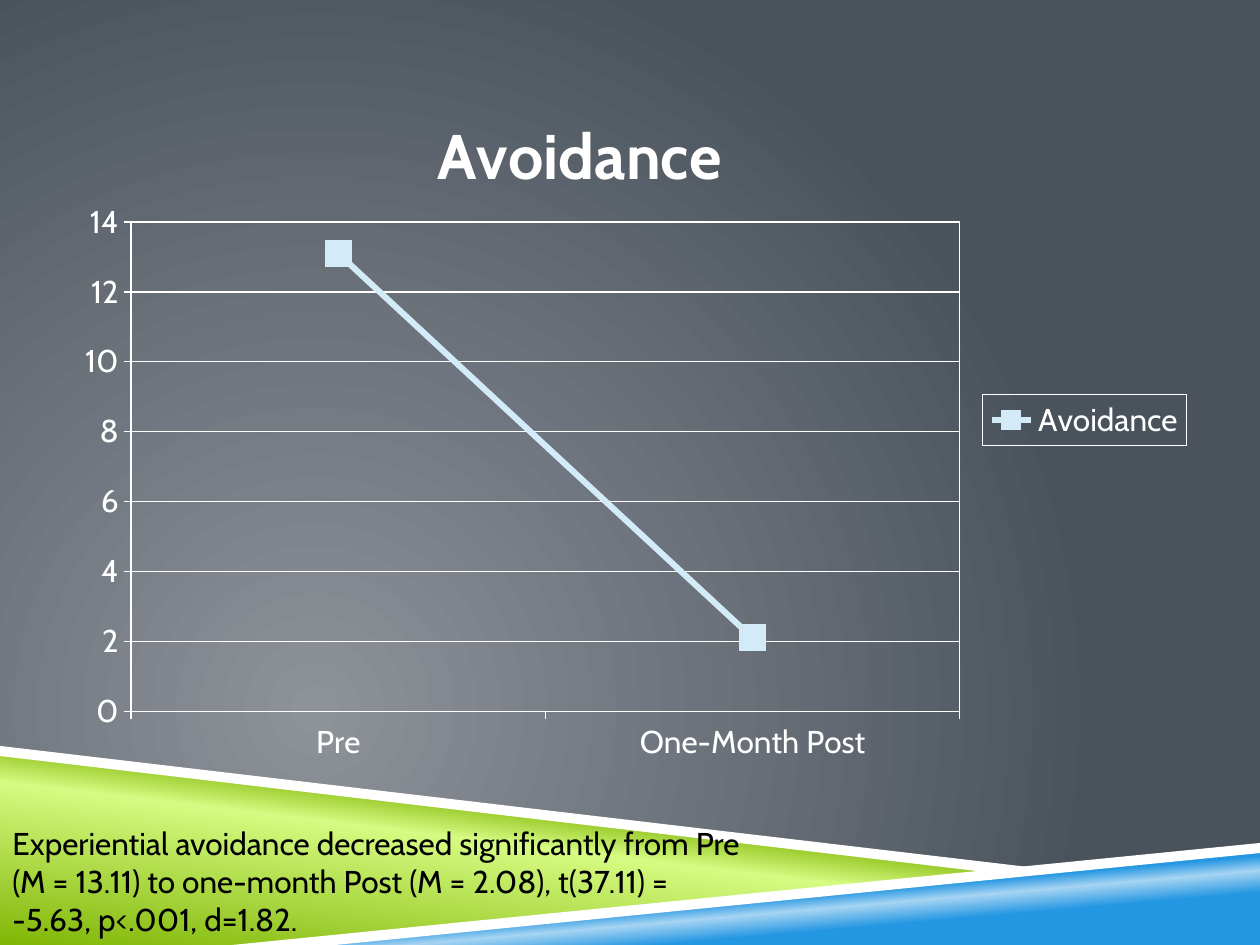
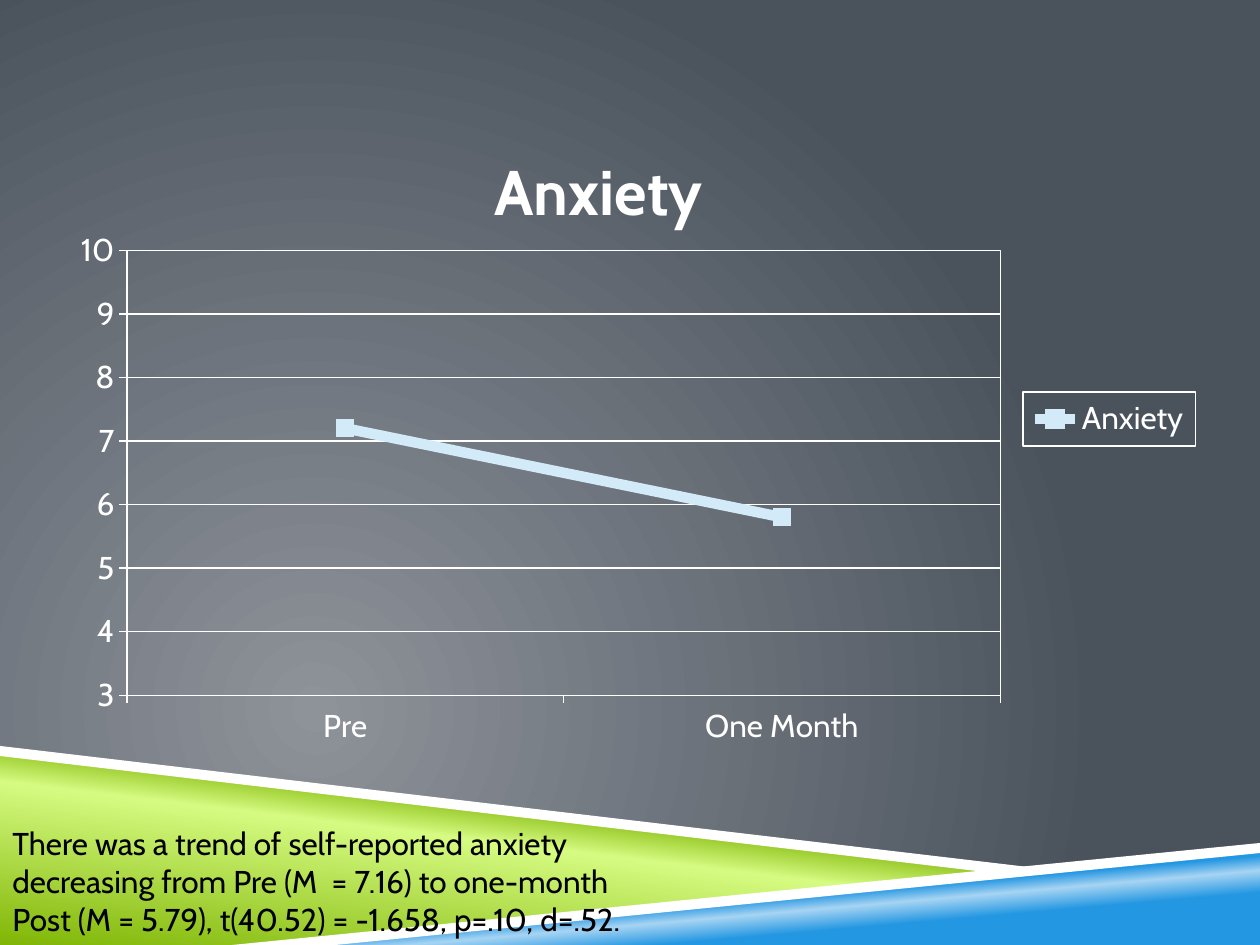
from dataclasses import dataclass

import lxml.etree
import pptx
import pptx.chart.data
import pptx.dml.color
import pptx.enum.chart
import pptx.enum.text
import pptx.oxml
import pptx.oxml.ns
import pptx.util

PX = 9144  # EMU in one px, 100 px to the inch
SLIDE_WIDTH, SLIDE_HEIGHT = 1000, 750


@dataclass(frozen=True)
class Theme:
    font: str = "Cabin"
    white: str = "FFFFFF"
    black: str = "000000"
    series: str = "D3EAF9"
    glow: str = "8E939A"
    slate: str = "4A525C"
    green: str = "80B606"
    lime: str = "D6FB82"
    blue: str = "2397E2"
    sky: str = "A7D5F3"
    title_size: int = 36
    text_size: int = 18


THEME = Theme()


@dataclass(frozen=True)
class Finding:
    measure: str
    times: tuple
    means: tuple
    scale: tuple  # minimum, maximum, step
    line_width: float
    marker_size: int
    chart_box: tuple
    title_at: tuple  # layouts are fractions of the chart box
    plot_at: tuple
    legend_at: tuple
    caption: str
    caption_box: tuple


FINDINGS = (
    Finding(
        "Avoidance", ("Pre", "One-Month Post"), (13.1, 2.1), (0, 14, 2),
        3.5, 15, (50, 45, 901, 571),
        (0.32, 0.06), (0.06, 0.23, 0.73, 0.68), (0.81, 0.47, 0.18, 0.07),
        "Experiential avoidance decreased significantly from Pre "
        "(M = 13.11) to one-month Post (M = 2.08), t(37.11) = "
        "-5.63, p<.001, d=1.82.",
        (0, 649, 602, 131),
    ),
    Finding(
        "Anxiety", ("Pre", "One Month"), (7.2, 5.8), (3, 10, 1),
        6, 10, (46, 65, 912, 535),
        (0.37, 0.08), (0.06, 0.25, 0.76, 0.66), (0.84, 0.46, 0.15, 0.08),
        "There was a trend of self-reported anxiety "
        "decreasing from Pre (M  = 7.16) to one-month "
        "Post (M = 5.79), t(40.52) = -1.658, p=.10, d=.52.",
        (0, 649, 516, 101),
    ),
)


def rgb(color):
    return pptx.dml.color.RGBColor.from_string(color)


def emu(box):
    return [pptx.util.Emu(length * PX) for length in box]


def style_font(font, size, color, bold=False):
    font.name = THEME.font
    font.size = pptx.util.Pt(size)
    font.bold = bold
    font.color.rgb = rgb(color)


def style_line(line, color, width):
    line.color.rgb = rgb(color)
    line.width = pptx.util.Pt(width)


def set_gradient(owner, stops, direction):
    """Refill the gradient inside owner; direction is its a:lin or a:path."""
    gradient = owner.find(".//" + pptx.oxml.ns.qn("a:gradFill"))
    for part in list(gradient):
        gradient.remove(part)
    stop_xml = "".join(
        f'<a:gs pos="{position * 1000}"><a:srgbClr val="{color}"/></a:gs>'
        for position, color in stops
    )
    wrapper = pptx.oxml.parse_xml(
        f'<a:gradFill {pptx.oxml.ns.nsdecls("a")}>'
        f"<a:gsLst>{stop_xml}</a:gsLst>{direction}</a:gradFill>"
    )
    gradient.extend(list(wrapper))


def paint_background(master):
    master.background.fill.gradient()
    set_gradient(
        master.element.cSld,
        ((0, THEME.glow), (100, THEME.slate)),
        '<a:path path="circle">'
        '<a:fillToRect l="50000" t="100000" r="100000" b="50000"/></a:path>',
    )


def draw_band(slide, corners):
    outline = slide.shapes.build_freeform(*corners[0], scale=PX)
    outline.add_line_segments(corners[1:], close=True)
    band = outline.convert_to_shape()
    band.shadow.inherit = False
    band.line.fill.background()
    return band


def draw_gradient_band(slide, corners, stops, angle):
    band = draw_band(slide, corners)
    band.fill.gradient()
    set_gradient(band.element, stops, f'<a:lin ang="{angle * 60000}" scaled="0"/>')
    return band


def draw_white_edge(slide, corners):
    edge = draw_band(slide, corners)
    edge.fill.solid()
    edge.fill.fore_color.rgb = rgb(THEME.white)
    return edge


def add_master_bands(master, slide):
    """Draw the bands on slide, then move them to the master for all slides."""
    bands = (
        draw_gradient_band(
            slide, ((0, 597), (792, 692), (200, SLIDE_HEIGHT), (0, SLIDE_HEIGHT)),
            ((0, THEME.green), (52, THEME.lime), (66, THEME.green)), 277),
        draw_gradient_band(
            slide, ((198, SLIDE_HEIGHT), (SLIDE_WIDTH, 672), (SLIDE_WIDTH, SLIDE_HEIGHT)),
            ((28, THEME.blue), (40, THEME.sky), (48, THEME.blue)), 265),
        draw_white_edge(slide, ((0, 592), (0, 600), (790, 693), (832, 690))),
        draw_white_edge(
            slide, ((SLIDE_WIDTH, 669), (184, SLIDE_HEIGHT),
                    (266, SLIDE_HEIGHT), (SLIDE_WIDTH, 677))),
    )
    for place, band in enumerate(bands, start=2):
        master.shapes.element.insert(place, band.element)


def place_part(part, fractions, index, inner=False):
    """Give a chart part a manual layout as its child number index."""
    layout_tag = pptx.oxml.ns.qn("c:layout")
    for stale in part.findall(layout_tag):
        part.remove(stale)
    layout = lxml.etree.Element(layout_tag)
    manual = lxml.etree.SubElement(layout, pptx.oxml.ns.qn("c:manualLayout"))
    settings = [("layoutTarget", "inner")] if inner else []
    settings += [("xMode", "edge"), ("yMode", "edge")]
    settings += zip("xywh", fractions)
    for name, value in settings:
        lxml.etree.SubElement(
            manual, pptx.oxml.ns.qn(f"c:{name}"), val=str(value))
    part.insert(index, layout)


def white_frame():
    return pptx.oxml.parse_xml(
        f'<c:spPr {pptx.oxml.ns.nsdecls("c", "a")}><a:noFill/>'
        f'<a:ln w="9525"><a:solidFill><a:srgbClr val="{THEME.white}"/>'
        "</a:solidFill></a:ln></c:spPr>"
    )


def style_axes(chart, scale):
    levels = chart.value_axis
    levels.minimum_scale, levels.maximum_scale, levels.major_unit = scale
    levels.has_major_gridlines = True
    style_line(levels.major_gridlines.format.line, THEME.white, 0.75)
    for axis in (levels, chart.category_axis):
        axis.major_tick_mark = pptx.enum.chart.XL_TICK_MARK.OUTSIDE
        axis.minor_tick_mark = pptx.enum.chart.XL_TICK_MARK.NONE
        style_line(axis.format.line, THEME.white, 0.75)


def style_series(plot, finding):
    plot.vary_by_categories = False
    means = plot.series[0]
    means.smooth = False
    style_line(means.format.line, THEME.series, finding.line_width)
    means.marker.style = pptx.enum.chart.XL_MARKER_STYLE.SQUARE
    means.marker.size = finding.marker_size
    means.marker.format.fill.solid()
    means.marker.format.fill.fore_color.rgb = rgb(THEME.series)
    means.marker.format.line.fill.background()


def add_means_chart(slide, finding):
    table = pptx.chart.data.CategoryChartData()
    table.categories = finding.times
    table.add_series(finding.measure, finding.means)
    chart = slide.shapes.add_chart(
        pptx.enum.chart.XL_CHART_TYPE.LINE_MARKERS,
        *emu(finding.chart_box), table).chart
    style_font(chart.font, THEME.text_size, THEME.white)

    chart.has_title = True
    heading = chart.chart_title.text_frame
    heading.text = finding.measure
    style_font(heading.paragraphs[0].font, THEME.title_size, THEME.white, bold=True)
    chart.chart_title.include_in_layout = False

    chart.has_legend = True
    chart.legend.position = pptx.enum.chart.XL_LEGEND_POSITION.RIGHT
    chart.legend.include_in_layout = False
    style_axes(chart, finding.scale)
    style_series(chart.plots[0], finding)

    find = chart.element.find
    title, plot_area, legend = (
        find(".//" + pptx.oxml.ns.qn(f"c:{name}"))
        for name in ("title", "plotArea", "legend"))
    place_part(title, finding.title_at, 1)
    place_part(plot_area, finding.plot_at, 0, inner=True)
    place_part(legend, finding.legend_at, 1)
    plot_area.append(white_frame())
    legend.find(pptx.oxml.ns.qn("c:overlay")).addnext(white_frame())


def add_caption(slide, finding):
    caption = slide.shapes.add_textbox(*emu(finding.caption_box)).text_frame
    caption.word_wrap = True
    caption.auto_size = pptx.enum.text.MSO_AUTO_SIZE.SHAPE_TO_FIT_TEXT
    caption.text = finding.caption
    style_font(caption.paragraphs[0].font, THEME.text_size, THEME.black)


def main():
    deck = pptx.Presentation()
    deck.slide_width, deck.slide_height = emu((SLIDE_WIDTH, SLIDE_HEIGHT))
    blank = deck.slide_layouts[6]
    slides = [deck.slides.add_slide(blank) for _ in FINDINGS]
    paint_background(deck.slide_master)
    add_master_bands(deck.slide_master, slides[0])
    for slide, finding in zip(slides, FINDINGS):
        add_means_chart(slide, finding)
        add_caption(slide, finding)
    deck.save("out.pptx")


if __name__ == "__main__":
    main()
